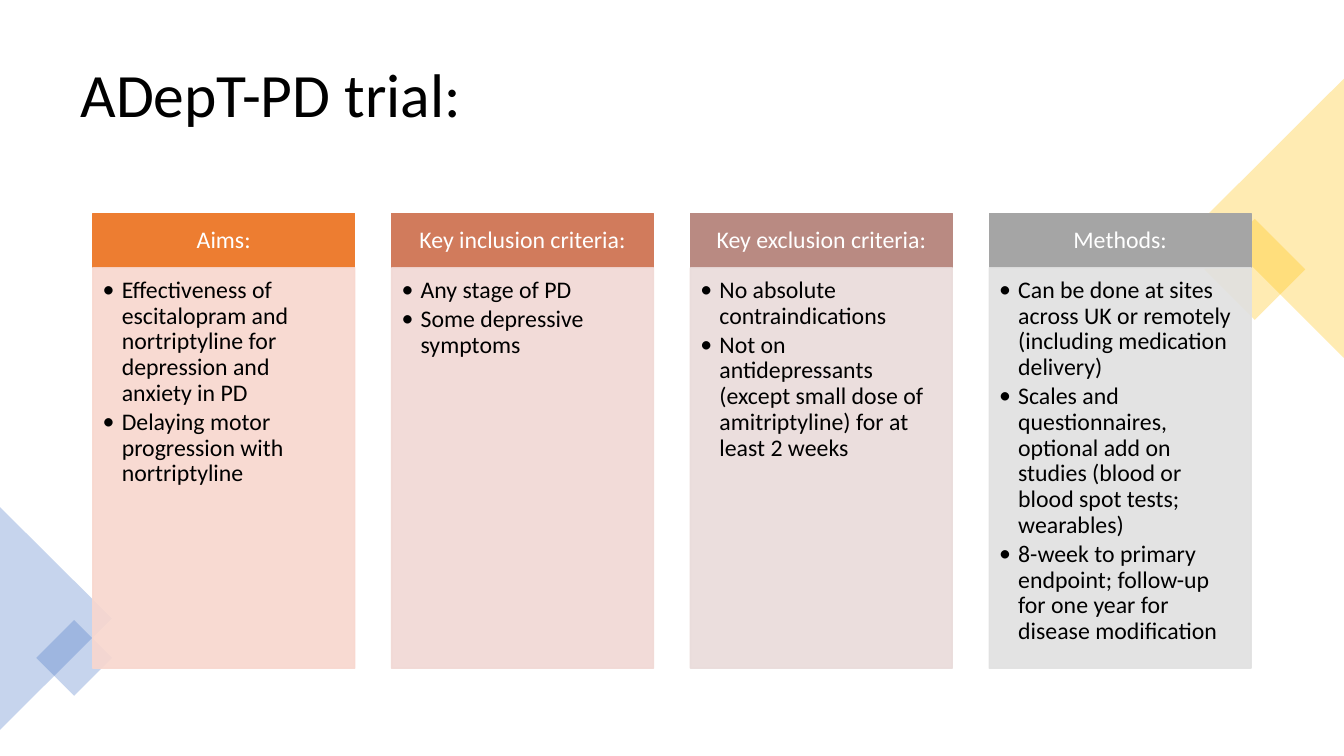
from lxml import etree
from pptx import Presentation
from pptx import util as u
from pptx.dml.color import RGBColor
from pptx.enum import shapes, text
from pptx.oxml.ns import qn

FONT = "Calibri"
BLACK = RGBColor(0x00, 0x00, 0x00)
WHITE = RGBColor(0xFF, 0xFF, 0xFF)
GOLD = RGBColor(0xFF, 0xC0, 0x00)
BLUE = RGBColor(0x44, 0x72, 0xC4)
ORANGE = RGBColor(0xED, 0x7D, 0x31)
TERRACOTTA = RGBColor(0xD1, 0x7B, 0x5C)
ROSE = RGBColor(0xB9, 0x8A, 0x82)
GREY = RGBColor(0xA5, 0xA5, 0xA5)
PALE_ORANGE = RGBColor(0xF8, 0xD7, 0xCE)
PALE_TERRACOTTA = RGBColor(0xF1, 0xD8, 0xD4)
PALE_ROSE = RGBColor(0xE9, 0xDB, 0xDA)
PALE_GREY = RGBColor(0xE1, 0xE1, 0xE1)

COLUMNS = [
    ("Aims:", ORANGE, PALE_ORANGE, [
        "Effectiveness of escitalopram and nortriptyline for depression and anxiety in PD",
        "Delaying motor progression with nortriptyline",
    ]),
    ("Key inclusion criteria:", TERRACOTTA, PALE_TERRACOTTA, [
        "Any stage of PD",
        "Some depressive symptoms",
    ]),
    ("Key exclusion criteria:", ROSE, PALE_ROSE, [
        "No absolute contraindications",
        "Not on antidepressants (except small dose of amitriptyline) for at least 2 weeks",
    ]),
    ("Methods:", GREY, PALE_GREY, [
        "Can be done at sites across UK or remotely (including medication delivery)",
        "Scales and questionnaires, optional add on studies "
        "(blood or blood spot tests; wearables)",
        "8-week to primary endpoint; follow-up for one year for disease modification",
    ]),
]


def set_opacity(fill_format_parent, percent):
    """Apply opacity to every solid colour below the given XML element."""
    for color in fill_format_parent.iter(qn("a:srgbClr")):
        etree.SubElement(color, qn("a:alpha"), val=str(percent * 1000))


def add_filled_shape(slide, kind, box, color, opacity=100, outlined=False):
    shape = slide.shapes.add_shape(kind, *[u.Cm(length) for length in box])
    shape.shadow.inherit = False
    shape.fill.solid()
    shape.fill.fore_color.rgb = color
    if outlined:
        shape.line.color.rgb = color
        shape.line.width = u.Pt(1)
    else:
        shape.line.fill.background()
    if opacity < 100:
        set_opacity(shape._element.spPr, opacity)
    return shape


def set_frame(shape, anchor, insets):
    """Set wrapping, anchor and the left, top, right and bottom insets in cm."""
    frame = shape.text_frame
    frame.word_wrap = True
    frame.vertical_anchor = anchor
    (frame.margin_left, frame.margin_top,
     frame.margin_right, frame.margin_bottom) = [u.Cm(inset) for inset in insets]
    return frame


def write(paragraph, words, size, color, alignment=text.PP_ALIGN.LEFT):
    paragraph.alignment = alignment
    paragraph.line_spacing = 0.9
    run = paragraph.add_run()
    run.text = words
    run.font.name = FONT
    run.font.size = u.Pt(size)
    run.font.color.rgb = color


def add_bullet(paragraph):
    properties = paragraph._p.get_or_add_pPr()
    properties.set("marL", str(u.Cm(0.48)))
    properties.set("indent", str(u.Cm(-0.48)))
    etree.SubElement(properties, qn("a:buFont"), typeface=FONT)
    etree.SubElement(properties, qn("a:buChar"), char="•")


def add_title(slide, left, top, width, height):
    box = slide.shapes.add_textbox(*[u.Cm(n) for n in (left, top, width, height)])
    frame = set_frame(box, text.MSO_ANCHOR.MIDDLE, (0.25, 0.13, 0.25, 0.13))
    write(frame.paragraphs[0], "ADepT-PD trial:", 44, BLACK)


def add_corner(slide, left, top, width, height, color, rotation, diamond):
    """Fill the box with a turned triangle; diamond is its centre x, y and side."""
    center_x, center_y = left + width / 2, top + height / 2
    # A quarter turn swaps the sides of the box.
    triangle = add_filled_shape(
        slide, shapes.MSO_SHAPE.ISOSCELES_TRIANGLE,
        (center_x - height / 2, center_y - width / 2, height, width), color, 30)
    triangle.rotation = rotation
    x, y, side = diamond
    square = add_filled_shape(
        slide, shapes.MSO_SHAPE.RECTANGLE,
        (left + x - side / 2, top + y - side / 2, side, side), color, 30)
    square.rotation = 45


def add_column(slide, left, top, width, height, column):
    heading, dark, pale, points = column
    header_height = 1.37
    header = add_filled_shape(slide, shapes.MSO_SHAPE.RECTANGLE,
                              (left, top, width, header_height), dark, outlined=True)
    frame = set_frame(header, text.MSO_ANCHOR.MIDDLE, (0.33, 0.2, 0.33, 0.2))
    write(frame.paragraphs[0], heading, 17, WHITE, text.PP_ALIGN.CENTER)

    body = add_filled_shape(
        slide, shapes.MSO_SHAPE.RECTANGLE,
        (left, top + header_height, width, height - header_height), pale, 90, True)
    frame = set_frame(body, text.MSO_ANCHOR.TOP, (0.25, 0.25, 0.33, 0.38))
    for index, point in enumerate(points):
        paragraph = frame.add_paragraph() if index else frame.paragraphs[0]
        write(paragraph, point, 17, BLACK)
        paragraph.space_after = u.Pt(2.5)
        add_bullet(paragraph)


def add_columns(slide, left, top, width, height):
    column_width = 6.6
    pitch = (width - column_width) / (len(COLUMNS) - 1)
    for index, column in enumerate(COLUMNS):
        add_column(slide, left + index * pitch, top, column_width, height, column)


def main():
    presentation = Presentation()
    presentation.slide_width = u.Cm(33.87)
    presentation.slide_height = u.Cm(19.05)
    slide = presentation.slides.add_slide(presentation.slide_layouts[6])
    add_title(slide, 1.78, 0.89, 30.3, 3.15)
    add_corner(slide, 30.34, 1.98, 3.53, 7.04, GOLD, 270, (1.28, 4.81, 1.8))
    add_corner(slide, 0, 12.78, 2.82, 5.61, BLUE, 90, (1.87, 3.8, 1.35))
    add_columns(slide, 2.34, 5.38, 29.19, 11.46)
    presentation.save("out.pptx")


if __name__ == "__main__":
    main()
